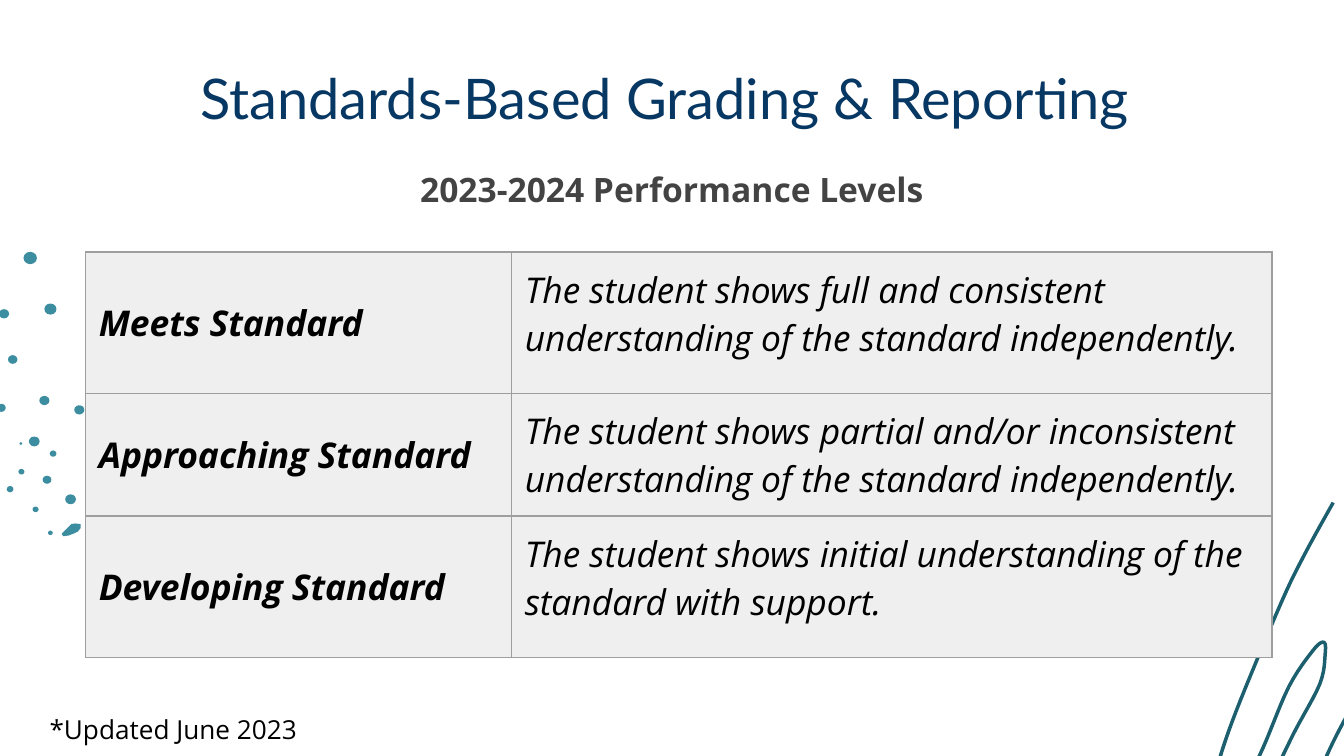
import math

from lxml import etree
from pptx import Presentation
from pptx import util as u
from pptx.dml import color
from pptx.enum import shapes, text
from pptx.oxml import ns

CELL = u.Inches(0.1)
COLUMNS, ROWS = 100, 56.25
TEAL, DEEP_TEAL, GRAY, BORDER = "3C8DA0", "1C5F6F", "EFEFEF", "9E9E9E"

DOTS = [
    (2.25, 0.5, 1), (3.75, 4.3, 0.9), (0.3, 4.65, 0.75), (0.95, 8.05, 0.7),
    (3.3, 11.1, 0.75), (0.1, 11.65, 0.65), (5.9, 11.8, 0.75),
    (1.55, 14.3, 0.2), (2.55, 14.15, 0.8), (3.95, 15.05, 0.5), (1.6, 16.4, 0.45),
    (3.5, 17, 0.65), (0.75, 17.7, 0.5), (5.25, 18.45, 0.8), (2.65, 19.2, 0.45),
    (3.75, 20.95, 0.35),
]
DROP = [(4.6, 21), (5.3, 20.3), (5.6, 20.25), (6, 20.3), (6, 20.6),
        (5.8, 20.85), (5.5, 21), (5.1, 21.15), (4.7, 21.2)]
SCRIBBLE = [
    (8.8, 0), (6.7, 3.8), (4.95, 7.4), (1.9, 14.7), (0.55, 18.4), (0.25, 19.8),
    (0.5, 21), (1.2, 21.3), (2.4, 20.5), (3.6, 18.2), (5.5, 13.7), (7.3, 11),
    (8.1, 10.4), (8.2, 11.3), (7.8, 13.5), (5.9, 17.1), (4.1, 20.8), (3.2, 22.6),
    (2.6, 24.2), (2.8, 26.1), (4, 26.4), (5.3, 25.5), (6.1, 23.9), (7.1, 21.6),
    (8.9, 17.6), (10.8, 14.2), (12.4, 12), (13.5, 11.4), (13.8, 12.8),
    (12.2, 17.9), (10.5, 20.8), (8.6, 24.6), (7.1, 28), (6.9, 29.5), (7.9, 29.6),
    (9.2, 28.3), (10.4, 26.7), (11.8, 22.9), (13.3, 19.3), (15.6, 15.4),
    (16.7, 14.4), (17.7, 14.6), (18, 16.2), (17.3, 18.7), (13.7, 25.2),
    (11.7, 28.4), (10.6, 30.2), (10.6, 31.8), (11.6, 32.4), (12.6, 32.3),
    (13.9, 31), (14.9, 29), (19.7, 19.1),
]
LEVELS = [
    ("Meets Standard", "The student shows full and consistent "
     "understanding of the standard independently."),
    ("Approaching Standard", "The student shows partial and/or inconsistent "
     "understanding of the standard independently."),
    ("Developing Standard", "The student shows initial understanding of the "
     "standard with support."),
]


def cells(*lengths):
    """Turn grid lengths into slide units."""
    return [round(length * CELL) for length in lengths]


def rgb(value):
    """Turn a hex string into a colour."""
    return color.RGBColor.from_string(value)


def paint(shape, fill):
    """Give a shape a plain fill without line or shadow."""
    shape.shadow.inherit = False
    shape.fill.solid()
    shape.fill.fore_color.rgb = rgb(fill)
    shape.line.fill.background()


def write(frame, words, size, ink="000000", face="Open Sans", bold=False,
          italic=False, align=text.PP_ALIGN.LEFT):
    """Write one run into the first paragraph of a frame."""
    para = frame.paragraphs[0]
    para.alignment = align
    span = para.add_run()
    span.text = words
    font = span.font
    font.size, font.name, font.bold, font.italic = u.Pt(size), face, bold, italic
    font.color.rgb = rgb(ink)


def add_text(page, box, words, size, anchor=text.MSO_ANCHOR.TOP, **style):
    """Place a wrapping text box with even insets."""
    frame = page.shapes.add_textbox(*cells(*box)).text_frame
    frame.word_wrap = True
    frame.vertical_anchor = anchor
    frame.margin_left = frame.margin_right = CELL
    frame.margin_top = frame.margin_bottom = CELL
    write(frame, words, size, **style)


def add_outline(page, corner, points, fill):
    """Draw a closed filled outline measured from a corner."""
    left, top = corner
    outline = [cells(left + x, top + y) for x, y in points]
    builder = page.shapes.build_freeform(*outline[0])
    builder.add_line_segments(outline[1:], close=True)
    paint(builder.convert_to_shape(), fill)


def smooth(points, steps=6):
    """Return a curve that passes through all the points."""
    padded = [points[0], *points, points[-1]]
    curve = []
    for a, b, c, d in zip(padded, padded[1:], padded[2:], padded[3:]):
        for step in range(steps):
            t = step / steps
            curve.append(tuple(
                q + t / 2 * (r - p + t * (2 * p - 5 * q + 4 * r - s
                                          + t * (3 * (q - r) + s - p)))
                for p, q, r, s in zip(a, b, c, d)))
    return curve + [points[-1]]


def add_scribble(page, box, half=0.13):
    """Draw the pen stroke as a thin ribbon."""
    curve = smooth(SCRIBBLE)
    near, far = [], []
    for before, (x, y), after in zip(curve[:1] + curve, curve, curve[1:] + curve[-1:]):
        dx, dy = after[0] - before[0], after[1] - before[1]
        scale = half / math.hypot(dx, dy)
        near.append((x - dy * scale, y + dx * scale))
        far.append((x + dy * scale, y - dx * scale))
    add_outline(page, box[:2], near + far[::-1], DEEP_TEAL)


def add_dots(page, box):
    """Scatter the dots and the drop at the left edge."""
    left, top = box[:2]
    for x, y, size in DOTS:
        height = size * 0.92
        dot = page.shapes.add_shape(shapes.MSO_SHAPE.OVAL, *cells(
            left + x - size / 2, top + y - height / 2, size, height))
        paint(dot, TEAL)
    add_outline(page, (left, top), DROP, TEAL)


def style_cell(cell):
    """Give a table cell its borders, fill and insets."""
    for side in ("a:lnL", "a:lnR", "a:lnT", "a:lnB"):
        line = etree.SubElement(cell._tc.get_or_add_tcPr(), ns.qn(side), w=str(u.Pt(0.75)))
        fill = etree.SubElement(line, ns.qn("a:solidFill"))
        etree.SubElement(fill, ns.qn("a:srgbClr"), val=BORDER)
    cell.fill.solid()
    cell.fill.fore_color.rgb = rgb(GRAY)
    cell.margin_left = cell.margin_right = CELL
    cell.margin_top = cell.margin_bottom = CELL


def add_levels(page, box, widths, heights):
    """Place the table of performance levels."""
    table = page.shapes.add_table(len(heights), len(widths), *cells(*box)).table
    table.first_row = table.horz_banding = False
    for column, width in zip(table.columns, cells(*widths)):
        column.width = width
    for row, height, level in zip(table.rows, cells(*heights), LEVELS):
        row.height = height
        for index, (cell, words) in enumerate(zip(row.cells, level)):
            style_cell(cell)
            write(cell.text_frame, words, 19, bold=index == 0, italic=True)
        row.cells[0].vertical_anchor = text.MSO_ANCHOR.MIDDLE


def main():
    """Build the slide and save it."""
    deck = Presentation()
    deck.slide_width, deck.slide_height = cells(COLUMNS, ROWS)
    page = deck.slides.add_slide(deck.slide_layouts[6])
    centre = text.PP_ALIGN.CENTER
    add_dots(page, (0, 18.7, 6.5, 21.2))
    add_scribble(page, (90.4, 37.4, 19.7, 32.4))
    add_text(page, (8.05, 4.1, 83.9, 6.3), "Standards-Based Grading & Reporting ", 30,
             text.MSO_ANCHOR.MIDDLE, ink="073763", face="Lato", align=centre)
    add_text(page, (7.85, 11.55, 84.3, 4.5), "2023-2024 Performance Levels", 18,
             ink="434343", bold=True, align=centre)
    add_levels(page, (6.35, 18.75, 88.3, 30.15), (31.7, 56.6), (10.5, 9.15, 10.5))
    add_text(page, (2.7, 52.1, 21.8, 3.2), "*Updated June 2023", 14)
    deck.save("out.pptx")


if __name__ == "__main__":
    main()
